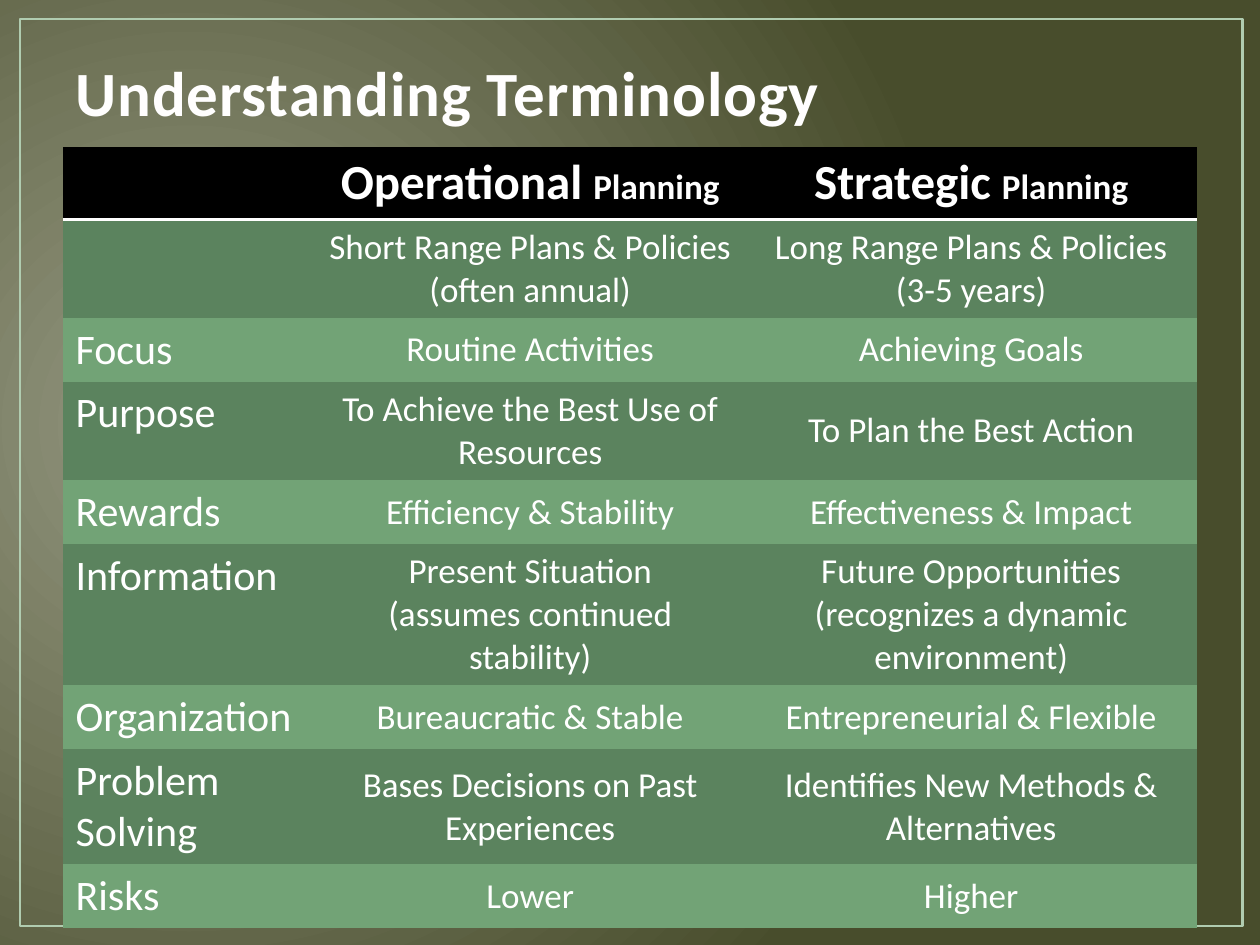
"""Build a slide with a table comparing operational and strategic planning."""
from lxml import etree
from pptx import Presentation
from pptx.dml.color import RGBColor
from pptx.enum import shapes, text
from pptx.oxml import parse_xml
from pptx.oxml.ns import nsdecls, qn
from pptx.util import Pt

WHITE = RGBColor(0xFF, 0xFF, 0xFF)
TITLE = RGBColor(0xFF, 0xFE, 0xFE)
BLACK = RGBColor(0, 0, 0)
FRAME = RGBColor(0xB0, 0xCC, 0xB0)
DARK_GREEN = RGBColor(0x5B, 0x83, 0x5E)
LIGHT_GREEN = RGBColor(0x72, 0xA3, 0x76)
OUTLINE = RGBColor(0x37, 0x54, 0x39)
BG_INNER = RGBColor(0x94, 0x97, 0x80)
BG_OUTER = RGBColor(0x48, 0x4D, 0x2C)

ROWS = [
    ("", "Short Range Plans & Policies\n(often annual)",
     "Long Range Plans & Policies\n(3-5 years)"),
    ("Focus", "Routine Activities", "Achieving Goals"),
    ("Purpose", "To Achieve the Best Use of Resources", "To Plan the Best Action"),
    ("Rewards", "Efficiency & Stability", "Effectiveness & Impact"),
    ("Information", "Present Situation\n(assumes continued stability)",
     "Future Opportunities\n(recognizes a dynamic environment)"),
    ("Organization", "Bureaucratic & Stable", "Entrepreneurial & Flexible"),
    ("Problem Solving", "Bases Decisions on Past Experiences",
     "Identifies New Methods & Alternatives"),
    ("Risks", "Lower", "Higher"),
]


def add_run(p, words, size, bold=False, color=WHITE):
    r = p.add_run()
    r.text = words
    r.font.name = "Calibri"
    r.font.size = Pt(size)
    r.font.bold = bold
    r.font.color.rgb = color
    return r


def line_xml(tag, width, color):
    return parse_xml(
        f'<a:{tag} {nsdecls("a")} w="{Pt(width)}"><a:solidFill>'
        f'<a:srgbClr val="{color}"/></a:solidFill></a:{tag}>')


prs = Presentation()
prs.slide_width, prs.slide_height = Pt(720), Pt(540)
s = prs.slides.add_slide(prs.slide_layouts[5])

fill = s.background.fill
fill.gradient()
for stop, color in zip(fill.gradient_stops, (BG_INNER, BG_OUTER)):
    stop.color.rgb = color
grad = s.background._cSld.find(".//" + qn("a:gradFill"))
grad.remove(grad.find(qn("a:lin")))
circle = etree.SubElement(grad, qn("a:path"), {"path": "circle"})
etree.SubElement(circle, qn("a:fillToRect"),
                 {"l": "15000", "t": "50000", "r": "85000", "b": "60000"})

frame = s.shapes.add_shape(shapes.MSO_SHAPE.RECTANGLE,
                           Pt(11.5), Pt(10.8), Pt(698.4), Pt(518.4))
frame.shadow.inherit = False
frame.fill.background()
frame.line.color.rgb = FRAME
frame.line.width = Pt(1.5)
s.shapes._spTree.insert(2, frame._element)

title = s.shapes.title
title.left, title.top, title.width, title.height = Pt(36), Pt(21.6), Pt(648), Pt(56)
tf = title.text_frame
tf.auto_size = text.MSO_AUTO_SIZE.NONE
tf.vertical_anchor = text.MSO_ANCHOR.BOTTOM
p = tf.paragraphs[0]
p.alignment = text.PP_ALIGN.LEFT
r = add_run(p, "Understanding Terminology", 36, True, TITLE)
rpr = r.font._element
rpr.set("spc", "50")
rpr.insert(0, line_xml("ln", 1.05, OUTLINE))

table = s.shapes.add_table(len(ROWS) + 1, 3, Pt(36), Pt(84), Pt(648), Pt(265.5)).table
table.horz_banding = False
style_id = table._tbl.tblPr.find(qn("a:tableStyleId"))
style_id.text = "{2D5ABB26-0587-4C30-8999-92F81FD0307C}"
for column, width in zip(table.columns, (144, 246, 258)):
    column.width = Pt(width)

for col, kind in enumerate(("", "Operational ", "Strategic ")):
    cell = table.cell(0, col)
    cell.fill.solid()
    cell.fill.fore_color.rgb = BLACK
    cell._tc.tcPr.insert(0, line_xml("lnB", 2, WHITE))
    if kind:
        cell.vertical_anchor = text.MSO_ANCHOR.MIDDLE
        p = cell.text_frame.paragraphs[0]
        p.alignment = text.PP_ALIGN.CENTER
        add_run(p, kind, 28, True)
        add_run(p, "Planning", 20, True)

for row, entries in enumerate(ROWS, 1):
    for col, entry in enumerate(entries):
        cell = table.cell(row, col)
        cell.fill.solid()
        cell.fill.fore_color.rgb = DARK_GREEN if row % 2 else LIGHT_GREEN
        if not entry:
            continue
        if col:
            cell.vertical_anchor = text.MSO_ANCHOR.MIDDLE
        tf = cell.text_frame
        for i, words in enumerate(entry.split("\n")):
            p = tf.add_paragraph() if i else tf.paragraphs[0]
            if col:
                p.alignment = text.PP_ALIGN.CENTER
            add_run(p, words, 20 if col else 24)

prs.save("out.pptx")
